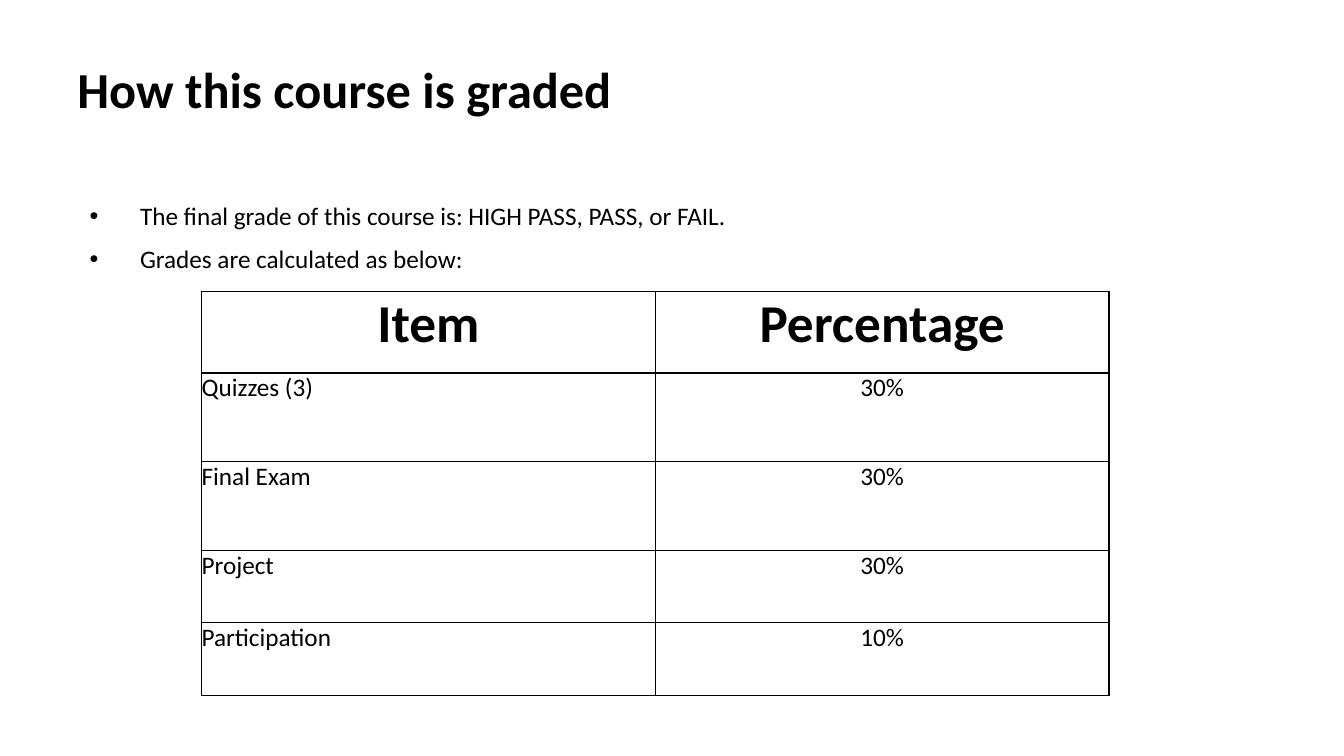
from lxml import etree
from pptx import Presentation
from pptx.dml.color import RGBColor
from pptx.enum.text import MSO_ANCHOR, PP_ALIGN
from pptx.oxml.ns import qn
from pptx.util import Inches, Pt

LEFT, CENTER = PP_ALIGN.LEFT, PP_ALIGN.CENTER
TOP = MSO_ANCHOR.TOP
FONT = "Calibri"
BLACK = "000000"

POINTS = [
    "The final grade of this course is: HIGH PASS, PASS, or FAIL.",
    "Grades are calculated as below:",
]
GRADES = [
    ("Item", "Percentage"),
    ("Quizzes (3)", "30%"),
    ("Final Exam", "30%"),
    ("Project", "30%"),
    ("Participation", "10%"),
]
HEIGHTS = [0.81, 0.88, 0.88, 0.72, 0.72]


def color(code):
    return RGBColor.from_string(code)


def add_run(para, text, size, bold=False):
    run = para.add_run()
    run.text = text
    font = run.font
    font.name, font.size, font.bold = FONT, Pt(size), bold
    font.color.rgb = color(BLACK)


def add_box(slide, box):
    frame = slide.shapes.add_textbox(*map(Inches, box)).text_frame
    frame.word_wrap = True
    frame.vertical_anchor = TOP
    return frame


def add_title(slide, box, text):
    para = add_box(slide, box).paragraphs[0]
    para.line_spacing = 0.9
    add_run(para, text, 36, True)


def add_bullet(para):
    props = para._p.get_or_add_pPr()
    props.set("marL", str(Inches(0.62)))
    props.set("indent", str(Inches(-0.5)))
    etree.SubElement(props, qn("a:buFont"), typeface="Arial")
    etree.SubElement(props, qn("a:buChar"), char="•")


def add_points(slide, box, points):
    frame = add_box(slide, box)
    for i, text in enumerate(points):
        para = frame.add_paragraph() if i else frame.paragraphs[0]
        para.line_spacing = 1.2
        para.space_before = Pt(5)
        add_bullet(para)
        add_run(para, text, 18)


def add_border(cell, width):
    props = cell._tc.get_or_add_tcPr()
    for side in ("a:lnL", "a:lnR", "a:lnT", "a:lnB"):
        line = etree.SubElement(props, qn(side), w=str(Pt(width)))
        fill = etree.SubElement(line, qn("a:solidFill"))
        etree.SubElement(fill, qn("a:srgbClr"), val=BLACK)


def add_grades(slide, box, rows, heights):
    count = len(rows[0])
    table = slide.shapes.add_table(len(rows), count, *map(Inches, box)).table
    for col in table.columns:
        col.width = Inches(box[2] / count)
    for r, (texts, height) in enumerate(zip(rows, heights)):
        table.rows[r].height = Inches(height)
        head = r == 0
        for c, text in enumerate(texts):
            cell = table.cell(r, c)
            cell.margin_left = cell.margin_right = 0
            cell.margin_top = cell.margin_bottom = 0
            cell.vertical_anchor = TOP
            add_border(cell, 1)
            cell.fill.background()
            para = cell.text_frame.paragraphs[0]
            para.alignment = CENTER if head or c else LEFT
            add_run(para, text, 38 if head else 18, head)


def main():
    deck = Presentation()
    deck.slide_width, deck.slide_height = Inches(13.33), Inches(7.5)
    slide = deck.slides.add_slide(deck.slide_layouts[6])
    add_title(slide, (0.67, 0.6, 11.65, 1.24), "How this course is graded")
    add_points(slide, (0.67, 1.88, 11.65, 0.9), POINTS)
    add_grades(slide, (2, 2.89, 9, sum(HEIGHTS)), GRADES, HEIGHTS)
    deck.save("out.pptx")


if __name__ == "__main__":
    main()
